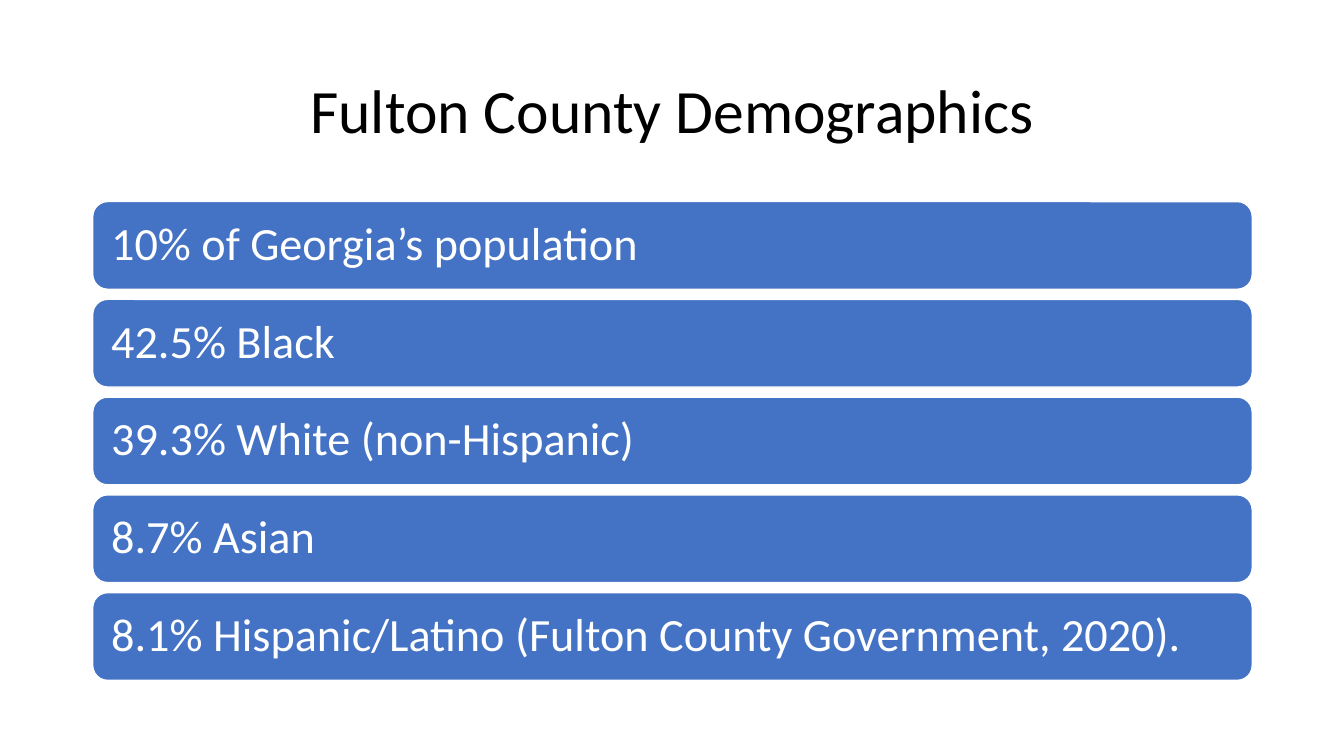
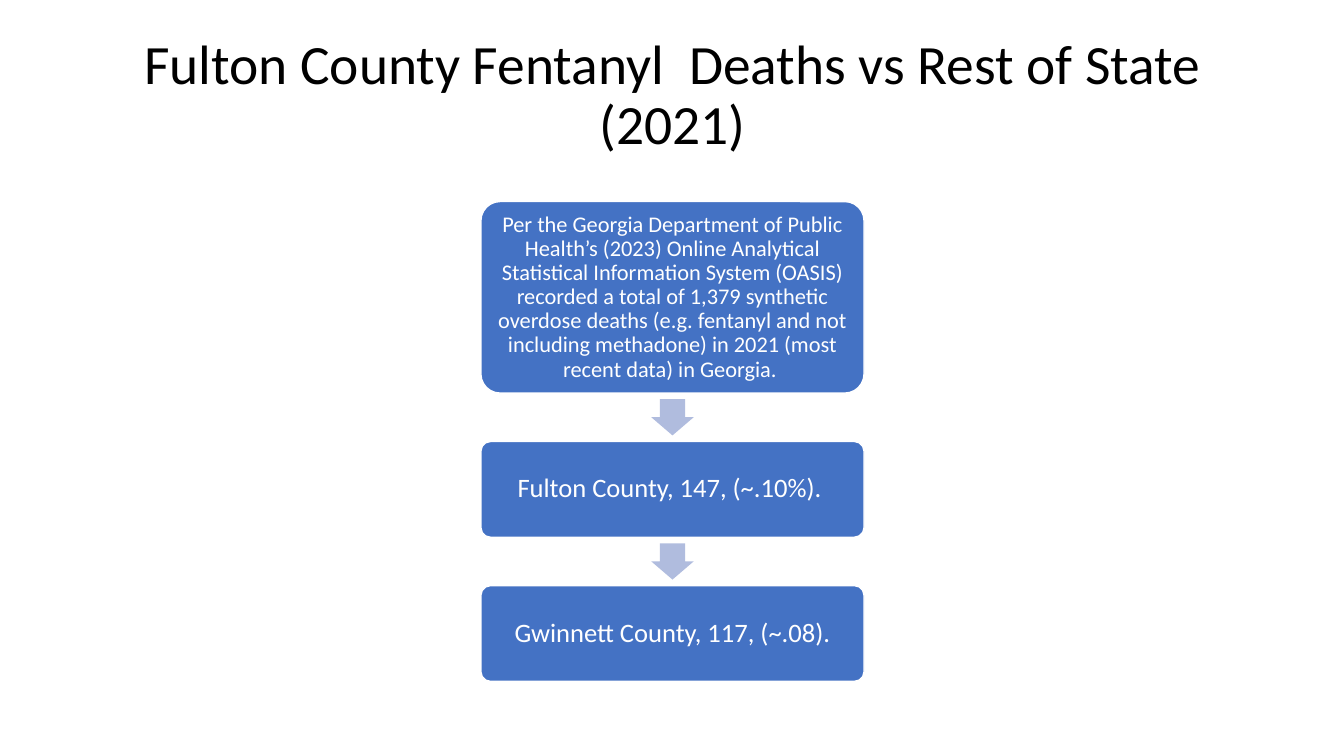
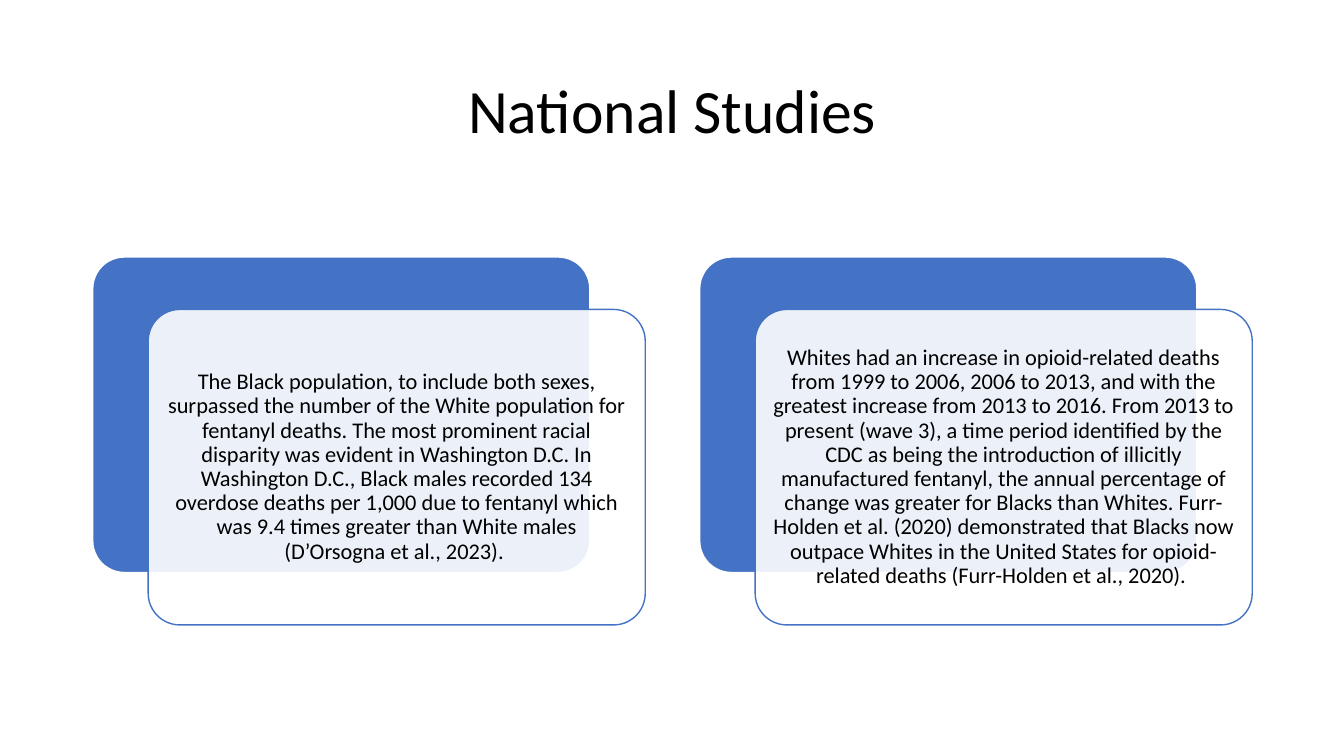
from pptx import Presentation
from pptx.dml.color import RGBColor
from pptx.enum.shapes import MSO_SHAPE as Preset
from pptx.enum.text import MSO_ANCHOR as Anchor, PP_ALIGN as Align
from pptx.oxml.ns import qn
from pptx.util import Pt
from lxml.etree import SubElement

EMU_PER_PX = 9144
PAGE_WIDTH, PAGE_HEIGHT = 1333, 750
LEFT, WIDTH = 92, 1150
FONT = "Calibri"
BLUE, PALE_BLUE, WHITE, BLACK = "4472C4", "B0BCDE", "FFFFFF", "000000"

DEMOGRAPHICS = [
    "10% of Georgia’s population",
    "42.5% Black",
    "39.3% White (non-Hispanic)",
    "8.7% Asian",
    "8.1% Hispanic/Latino (Fulton County Government, 2020).",
]
DEATH_STEPS = [
    ("Per the Georgia Department of Public Health’s (2023) Online Analytical "
     "Statistical Information System (OASIS) recorded a total of 1,379 synthetic "
     "overdose deaths (e.g. fentanyl and not including methadone) in 2021 "
     "(most recent data) in Georgia. ", 190, 16, 7),
    ("Fulton County, 147, (~.10%). ", 95, 19, 8),
    ("Gwinnett County, 117, (~.08).", 95, 19, 8),
]
STUDIES = [
    "The Black population, to include both sexes, surpassed the number of the "
    "White population for fentanyl deaths. The most prominent racial disparity "
    "was evident in Washington D.C. In Washington D.C., Black males recorded 134 "
    "overdose deaths per 1,000 due to fentanyl which was 9.4 times greater than "
    "White males (D’Orsogna et al., 2023). ",
    "Whites had an increase in opioid-related deaths from 1999 to 2006, 2006 to "
    "2013, and with the greatest increase from 2013 to 2016. From 2013 to present "
    "(wave 3), a time period identified by the CDC as being the introduction of "
    "illicitly manufactured fentanyl, the annual percentage of change was greater "
    "for Blacks than Whites. Furr-Holden et al. (2020) demonstrated that Blacks "
    "now outpace Whites in the United States for opioid-related deaths "
    "(Furr-Holden et al., 2020). ",
]


def px(*lengths):
    return [length * EMU_PER_PX for length in lengths]


def color(value):
    return RGBColor.from_string(value)


def write(box, text, size, ink, align=Align.CENTER, margins=(10, 5)):
    frame = box.text_frame
    frame.word_wrap = True
    frame.vertical_anchor = Anchor.MIDDLE
    side, end = px(*margins)
    frame.margin_left = frame.margin_right = side
    frame.margin_top = frame.margin_bottom = end
    para = frame.paragraphs[0]
    para.alignment = align
    para.line_spacing = 0.9
    span = para.add_run()
    span.text = text
    span.font.name = FONT
    span.font.size = Pt(size)
    span.font.color.rgb = color(ink)


def add_title(page, text, size=44, height=145):
    box = page.shapes.add_textbox(*px(LEFT, 40, WIDTH, height))
    write(box, text, size, BLACK)


def add_preset(page, preset, place, fill, line=None, adjust=(), opacity=100):
    shape = page.shapes.add_shape(preset, *px(*place))
    shape.shadow.inherit = False
    shape.fill.solid()
    shape.fill.fore_color.rgb = color(fill)
    if opacity < 100:
        tint = shape.fill._xPr.find(qn("a:solidFill"))[0]
        SubElement(tint, qn("a:alpha"), val=str(opacity * 1000))
    if line:
        shape.line.color.rgb = color(line)
        shape.line.width = Pt(1)
    else:
        shape.line.fill.background()
    for index, value in enumerate(adjust):
        shape.adjustments[index] = value
    return shape


def add_card(page, place, fill=BLUE, line=WHITE, corner=0.1, opacity=100):
    return add_preset(page, Preset.ROUNDED_RECTANGLE, place, fill, line,
                      (corner,), opacity)


def add_bars(page, labels):
    height, pitch = 87, 97
    for index, label in enumerate(labels):
        bar = add_card(page, (LEFT, 200 + index * pitch, WIDTH, height),
                       corner=0.17)
        write(bar, label, 33, WHITE, Align.LEFT, (14, 14))


def add_flow(page, steps):
    width, gap = 380, 48
    arrow_width, arrow_height = 42, 36
    left, top = 477, 200
    for index, (text, height, size, margin) in enumerate(steps):
        if index:
            add_preset(page, Preset.DOWN_ARROW,
                       (left + (width - arrow_width) // 2,
                        top - (gap + arrow_height) // 2,
                        arrow_width, arrow_height),
                       PALE_BLUE, adjust=(0.6, 0.5))
        card = add_card(page, (left, top, width, height))
        write(card, text, size, WHITE, margins=(margin, margin))
        top += height + gap


def add_layered_cards(page, texts):
    width, height, pitch = 493, 313, 602
    for index, text in enumerate(texts):
        left, top = LEFT + index * pitch, 255
        add_card(page, (left, top, width, height))
        front = add_card(page, (left + 55, top + 52, width, height),
                         WHITE, BLUE, opacity=90)
        write(front, text, 16, BLACK, margins=(7, 7))


def main():
    deck = Presentation()
    deck.slide_width, deck.slide_height = px(PAGE_WIDTH, PAGE_HEIGHT)
    blank = deck.slide_layouts[6]

    page = deck.slides.add_slide(blank)
    add_title(page, "Fulton County Demographics")
    add_bars(page, DEMOGRAPHICS)

    page = deck.slides.add_slide(blank)
    add_title(page, "Fulton County Fentanyl  Deaths vs Rest of State (2021)",
              size=39.6, height=112)
    add_flow(page, DEATH_STEPS)

    page = deck.slides.add_slide(blank)
    add_title(page, "National Studies")
    add_layered_cards(page, STUDIES)

    deck.save("out.pptx")


if __name__ == "__main__":
    main()
